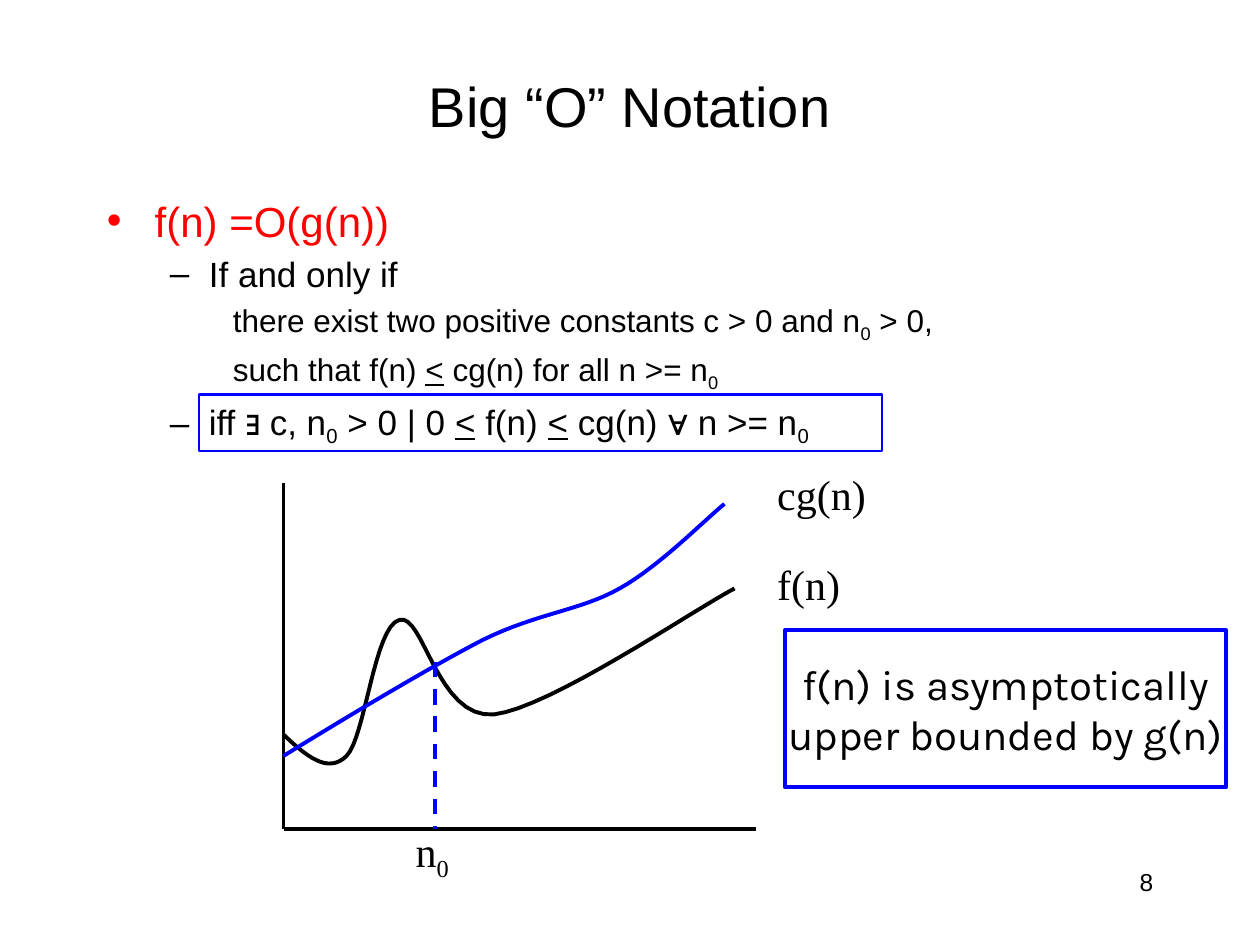
from lxml import etree
from pptx import Presentation
from pptx.dml.color import RGBColor
from pptx.enum.dml import MSO_LINE
from pptx.enum.shapes import MSO_CONNECTOR, MSO_SHAPE
from pptx.enum.text import MSO_ANCHOR, PP_ALIGN
from pptx.oxml.ns import qn
from pptx.util import Inches, Pt

RECTANGLE = MSO_SHAPE.RECTANGLE
STRAIGHT = MSO_CONNECTOR.STRAIGHT
DASH = MSO_LINE.DASH
LEFT, CENTER, RIGHT = PP_ALIGN.LEFT, PP_ALIGN.CENTER, PP_ALIGN.RIGHT
MIDDLE = MSO_ANCHOR.MIDDLE

COLORS = {"ink": "000000", "accent": "0000FF", "claim": "FF0000"}
SANS, SERIF, CALLOUT = "Arial", "Times New Roman", "Karla"
CURVE_STEPS = 16

# Left margin, first-line indent, bullet and size of each outline level
LEVELS = [(0.38, -0.38, "•", 24), (0.81, -0.31, "–", 20), (1.25, -0.25, None, 18)]

# Each line is a level, a colour and its runs; a run is a text and a style
DEFINITION = [
    (0, "claim", [("f(n) =O(g(n))", "")]),
    (1, "ink", [("If and only if", "")]),
    (2, "ink", [("there exist two positive constants c > 0 and n", ""),
                ("0", "sub"), (" > 0,", "")]),
    (2, "ink", [("such that f(n) ", ""), ("<", "under"),
                (" cg(n) for all n >= n", ""), ("0", "sub")]),
    (1, "ink", [("iff ∃ c, n", ""), ("0", "sub"), (" > 0 | 0 ", ""),
                ("<", "under"), (" f(n) ", ""), ("<", "under"),
                (" cg(n) ∀ n >= n", ""), ("0", "sub")]),
]

# Bezier points from the plot's top left corner, in inches
F_CURVE = [(0, 2), (0.17, 2.16), (0.35, 2.32), (0.5, 2.17),
           (0.65, 2.02), (0.72, 1.14), (0.92, 1.09),
           (1.11, 1.03), (1.22, 1.88), (1.67, 1.84),
           (2.11, 1.79), (3.24, 1.02), (3.58, 0.84)]
CG_CURVE = [(0, 2.17), (0.57, 1.82), (1.14, 1.48), (1.58, 1.25),
            (2.03, 1.03), (2.35, 1.02), (2.67, 0.84),
            (2.99, 0.66), (3.35, 0.29), (3.5, 0.17)]


def rgb(color):
    return RGBColor.from_string(COLORS[color])


def add_runs(paragraph, runs, size, font=SANS, color="ink"):
    for text, style in runs:
        run = paragraph.add_run()
        run.text = text
        run.font.size = Pt(size)
        run.font.name = font
        run.font.color.rgb = rgb(color)
        if style == "under":
            run.font.underline = True
        elif style == "sub":
            run.font._element.set("baseline", "-25000")


def add_label(slide, box, runs, size, font, align=LEFT, wrap=False):
    frame = slide.shapes.add_textbox(*map(Inches, box)).text_frame
    frame.word_wrap = wrap
    frame.paragraphs[0].alignment = align
    add_runs(frame.paragraphs[0], runs, size, font)


def set_line(shape, color, width):
    shape.line.color.rgb = rgb(color)
    shape.line.width = Pt(width)


def add_frame(slide, box, width):
    frame = slide.shapes.add_shape(RECTANGLE, *map(Inches, box))
    frame.shadow.inherit = False
    frame.fill.background()
    set_line(frame, "accent", width)
    return frame


def add_straight(slide, start, end, color):
    line = slide.shapes.add_connector(STRAIGHT, *map(Inches, start + end))
    set_line(line, color, 2.25)
    etree.SubElement(line._element.spPr, qn("a:effectLst"))
    return line


def bezier_points(points):
    for i in range(0, len(points) - 1, 3):
        a, b, c, d = points[i:i + 4]
        for step in range(1, CURVE_STEPS + 1):
            t = step / CURVE_STEPS
            u = 1 - t
            yield tuple(u**3 * p + 3 * u * u * t * q + 3 * u * t * t * r + t**3 * s
                        for p, q, r, s in zip(a, b, c, d))


def add_curve(slide, left, top, points, color):
    def place(point):
        return Inches(left + point[0]), Inches(top + point[1])

    builder = slide.shapes.build_freeform(*place(points[0]))
    builder.add_line_segments([place(p) for p in bezier_points(points)], close=False)
    curve = builder.convert_to_shape()
    curve.shadow.inherit = False
    curve.fill.background()
    set_line(curve, color, 2.25)


def add_title(slide, box):
    title = slide.shapes.title
    title.left, title.top, title.width, title.height = map(Inches, box)
    title.text_frame.vertical_anchor = MIDDLE
    paragraph = title.text_frame.paragraphs[0]
    paragraph.alignment = CENTER
    add_runs(paragraph, [("Big “O” Notation", "")], 32)


def add_definition(slide, box):
    left, top, _, _ = box
    add_frame(slide, (left + 0.83, top + 1.63, 5.42, 0.45), 1.5)
    frame = slide.shapes.add_textbox(*map(Inches, box)).text_frame
    frame.word_wrap = True
    for i, (level, color, runs) in enumerate(DEFINITION):
        paragraph = frame.add_paragraph() if i else frame.paragraphs[0]
        margin, indent, bullet, size = LEVELS[level]
        paragraph.level = level
        props = paragraph._p.get_or_add_pPr()
        props.set("marL", str(Inches(margin)))
        props.set("indent", str(Inches(indent)))
        space = etree.SubElement(props, qn("a:spcBef"))
        etree.SubElement(space, qn("a:spcPct")).set("val", "20000")
        if bullet:
            etree.SubElement(props, qn("a:buFont")).set("typeface", SANS)
            etree.SubElement(props, qn("a:buChar")).set("char", bullet)
        add_runs(paragraph, runs, size, color=color)


def add_plot(slide, box):
    left, top, width, height = box
    bottom = top + height
    # Axes
    for end in ((left + width, bottom), (left, top)):
        add_straight(slide, (left, bottom), end, "ink")
    # Curves and threshold
    add_curve(slide, left, top, F_CURVE, "ink")
    add_curve(slide, left, top, CG_CURVE, "accent")
    threshold = left + 1.2
    marker = add_straight(slide, (threshold, top + 1.42), (threshold, bottom), "accent")
    marker.line.dash_style = DASH
    # Labels
    for x, y, label_width, runs in (
            (3.82, 0.55, 0.7, [("f(n)", "")]),
            (3.82, -0.16, 0.9, [("cg(n)", "")]),
            (0.95, 2.67, 0.48, [("n", ""), ("0", "sub")])):
        add_label(slide, (left + x, top + y, label_width, 0.5), runs, 24, SERIF)


def add_conclusion(slide, box):
    frame = add_frame(slide, box, 2.25).text_frame
    frame.word_wrap = False
    frame.vertical_anchor = MIDDLE
    for i, text in enumerate(("f(n) is asymptotically", "upper bounded by g(n)")):
        paragraph = frame.add_paragraph() if i else frame.paragraphs[0]
        paragraph.alignment = CENTER
        add_runs(paragraph, [(text, "")], 24, CALLOUT)


def main():
    deck = Presentation()
    deck.slide_width, deck.slide_height = Inches(10), Inches(7.5)
    slide = deck.slides.add_slide(deck.slide_layouts[5])
    add_title(slide, (0.75, 0.42, 8.5, 0.83))
    add_definition(slide, (0.75, 1.5, 8.5, 5.17))
    add_plot(slide, (2.25, 3.83, 3.75, 2.75))
    add_conclusion(slide, (6.23, 5, 3.5, 1.25))
    # Page number
    add_label(slide, (7.17, 6.83, 2.08, 0.5), [("8", "")], 14, SANS, RIGHT, wrap=True)
    deck.save("out.pptx")


if __name__ == "__main__":
    main()
